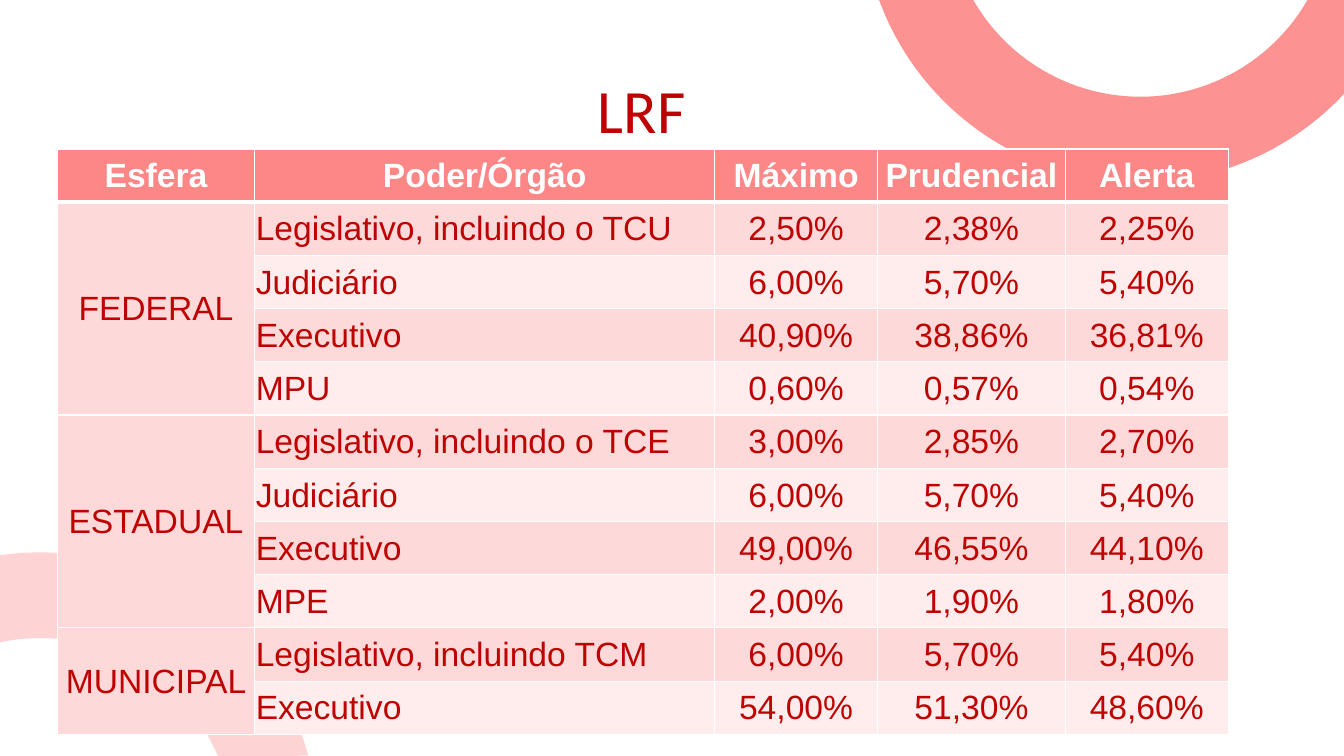
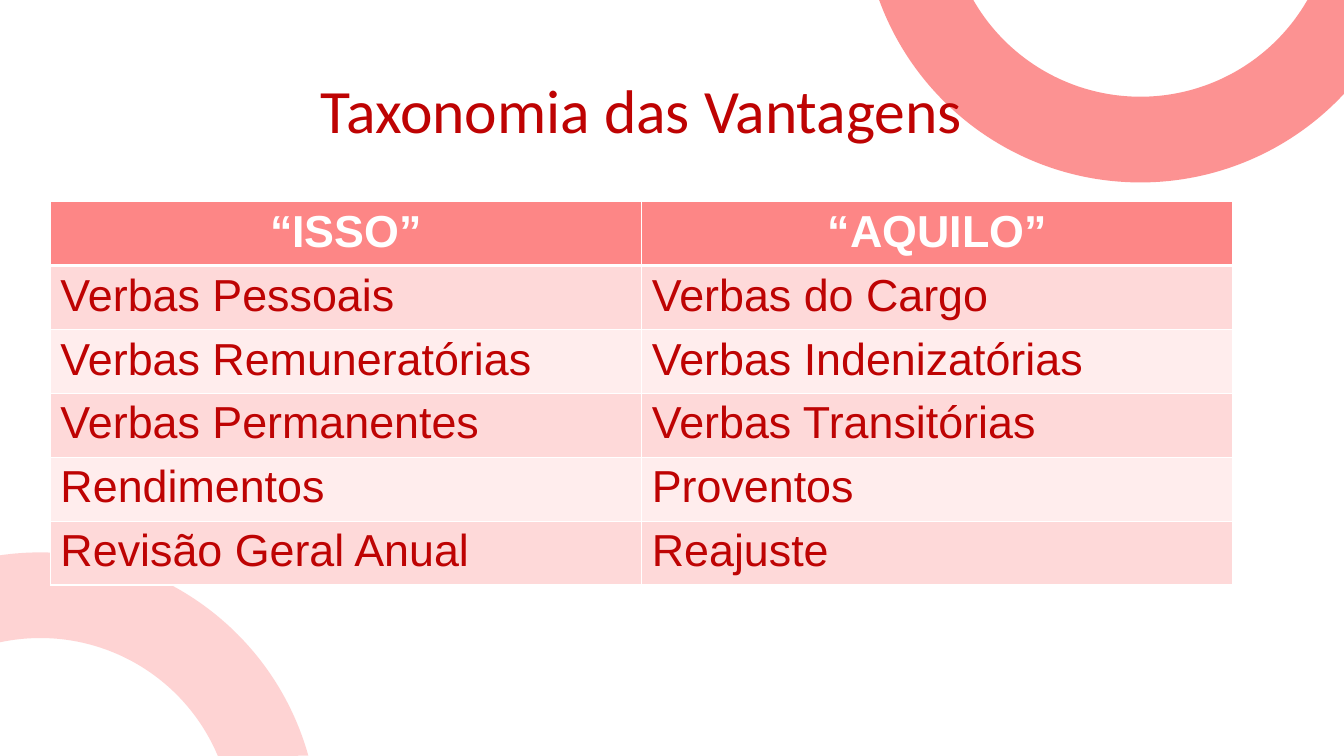
from dataclasses import dataclass
from itertools import pairwise
from math import cos, radians, sin, tan

from pptx import Presentation
from pptx import util as u
from pptx.dml.color import RGBColor
from pptx.enum import text as t
from pptx.oxml import ns, xmlchemy as xml

WIDTH, HEIGHT = u.Inches(13.33), u.Inches(7.5)
WHITE = RGBColor(0xFF, 0xFF, 0xFF)
RED = RGBColor(0xBE, 0x03, 0x03)
RING = RGBColor(0xFB, 0x27, 0x27)
HEAD = RGBColor(0xFD, 0x86, 0x86)
BANDS = (RGBColor(0xFF, 0xED, 0xED), RGBColor(0xFE, 0xD9, 0xD9))
OUTER, INNER = u.Inches(2.76), u.Inches(1.91)


@dataclass(frozen=True)
class Ring:
    """Cut ring: centre and corners in percent of the slide, angles in degrees."""
    x: float
    y: float
    outer: tuple[float, ...]
    inner: tuple[float, ...]
    alpha: int
    corners: tuple[tuple[float, float], ...] = ()


@dataclass(frozen=True)
class Grid:
    """Table: lengths in percent of the slide, insets in inches."""
    left: float
    top: float
    cols: tuple[float, ...]
    row: float
    tall: float
    size: int
    rows: list[tuple[str, ...]]
    flush: set[int]
    inset: tuple[float, float, float]
    spans: tuple[int, ...] = ()


RINGS = (
    Ring(3, 109.87, (-98.3, -90, -15.6), (-22.8, -90, -102.1), 20),
    Ring(84.85, -12.67, (160, 90, 43), (29.8, 90, 150.2), 50, ((100, 0),)),
)

LIMITS = Grid(
    4.26, 19.7, (14.7, 34.2, 12.15, 13.95, 12.15), 7.04, 77.47, 24,
    [
        ("Esfera", "Poder/Órgão", "Máximo", "Prudencial", "Alerta"),
        ("FEDERAL", "Legislativo, incluindo o TCU", "2,50%", "2,38%", "2,25%"),
        ("", "Judiciário", "6,00%", "5,70%", "5,40%"),
        ("", "Executivo", "40,90%", "38,86%", "36,81%"),
        ("", "MPU", "0,60%", "0,57%", "0,54%"),
        ("ESTADUAL", "Legislativo, incluindo o TCE", "3,00%", "2,85%", "2,70%"),
        ("", "Judiciário", "6,00%", "5,70%", "5,40%"),
        ("", "Executivo", "49,00%", "46,55%", "44,10%"),
        ("", "MPE", "2,00%", "1,90%", "1,80%"),
        ("MUNICIPAL", "Legislativo, incluindo TCM", "6,00%", "5,70%", "5,40%"),
        ("", "Executivo", "54,00%", "51,30%", "48,60%"),
    ],
    {1}, (0.01, 0.01, 0), (4, 4, 2),
)

TERMS = Grid(
    3.75, 26.67, (44, 44), 5.47, 50.67, 32,
    [
        ("“ISSO”", "“AQUILO”"),
        ("Verbas Pessoais", "Verbas do Cargo"),
        ("Verbas Remuneratórias", "Verbas Indenizatórias"),
        ("Verbas Permanentes", "Verbas Transitórias"),
        ("Rendimentos", "Proventos"),
        ("Revisão Geral Anual", "Reajuste"),
    ],
    {0, 1}, (0.1, 0.05, 0.05),
)


def wide(share: float) -> int:
    return round(WIDTH * share / 100)


def high(share: float) -> int:
    return round(HEIGHT * share / 100)


def write(par, words: str, font: str, size: int, color: RGBColor, bold: bool = False) -> None:
    run = par.add_run()
    run.text = words
    run.font.name, run.font.size, run.font.bold = font, u.Pt(size), bold
    run.font.color.rgb = color


def arc(ring: Ring, radius: int, turns: tuple[float, ...]) -> list[tuple[int, int]]:
    """Start point, then two handles and an end point for each curve."""
    def spot(turn: float, pull: float) -> tuple[int, int]:
        x = cos(turn) - pull * sin(turn)
        y = sin(turn) + pull * cos(turn)
        return round(wide(ring.x) + radius * x), round(high(ring.y) + radius * y)

    angles = [radians(turn) for turn in turns]
    points = [spot(angles[0], 0)]
    for a, b in pairwise(angles):
        pull = 4 / 3 * tan((b - a) / 4)
        points += [spot(a, pull), spot(b, -pull), spot(b, 0)]
    return points


def bend(lines: list) -> None:
    """Turn each three line segments into one curve."""
    for one, two, three in zip(lines[::3], lines[1::3], lines[2::3]):
        curve = xml.OxmlElement("a:cubicBezTo")
        one.addprevious(curve)
        for line in (one, two, three):
            curve.append(line[0])
            line.getparent().remove(line)


def draw_ring(slide, ring: Ring) -> None:
    first, *outer = arc(ring, OUTER, ring.outer)
    corners = [(wide(x), high(y)) for x, y in ring.corners]
    inner = arc(ring, INNER, ring.inner)
    path = slide.shapes.build_freeform(*first)
    path.add_line_segments(outer + corners + inner, close=True)
    shape = path.convert_to_shape()
    lines = list(shape.element.iter(ns.qn("a:lnTo")))
    bend(lines[:len(outer)])
    bend(lines[len(outer) + len(corners) + 1:])
    shape.shadow.inherit = False
    shape.fill.solid()
    shape.fill.fore_color.rgb = RING
    alpha = xml.OxmlElement("a:alpha")
    alpha.set("val", str(ring.alpha * 1000))
    next(shape.element.iter(ns.qn("a:srgbClr"))).append(alpha)
    shape.line.fill.background()


def draw_title(slide, words: str) -> None:
    box = slide.shapes.add_textbox(wide(3.75), high(5.33), wide(88), high(19.33))
    frame = box.text_frame
    frame.word_wrap = True
    frame.vertical_anchor = t.MSO_ANCHOR.MIDDLE
    par = frame.paragraphs[0]
    par.alignment, par.line_spacing = t.PP_ALIGN.CENTER, 0.9
    write(par, words, "Calibri", 44, RED)


def add_edges(cell, top: int, low: int) -> None:
    """White borders; the top and bottom widths are in points."""
    props = cell._tc.get_or_add_tcPr()
    for spot, (side, size) in enumerate(zip("LRTB", (1, 1, top, low))):
        line = xml.OxmlElement(f"a:ln{side}")
        line.set("w", str(u.Pt(size)))
        fill = xml.OxmlElement("a:solidFill")
        color = xml.OxmlElement("a:srgbClr")
        color.set("val", str(WHITE))
        fill.append(color)
        line.append(fill)
        props.insert(spot, line)


def draw_cell(cell, grid: Grid, row: int, col: int) -> None:
    head = row == 0
    cell.fill.solid()
    cell.fill.fore_color.rgb = HEAD if head else BANDS[row % 2]
    side, top, low = map(u.Inches, grid.inset)
    cell.margin_left = cell.margin_right = side
    cell.margin_top, cell.margin_bottom = top, low
    if grid.spans:
        cell.vertical_anchor = t.MSO_ANCHOR.MIDDLE
    par = cell.text_frame.paragraphs[0]
    flush = col in grid.flush and not head
    par.alignment = t.PP_ALIGN.LEFT if flush else t.PP_ALIGN.CENTER
    write(par, grid.rows[row][col], "Arial", grid.size, WHITE if head else RED, head)
    add_edges(cell, 3 if row == 1 else 1, 3 if head else 1)


def draw_grid(slide, grid: Grid) -> None:
    count = len(grid.rows)
    frame = slide.shapes.add_table(
        count, len(grid.cols), wide(grid.left), high(grid.top),
        wide(sum(grid.cols)), high(grid.tall))
    table = frame.table
    for col, share in zip(table.columns, grid.cols):
        col.width = wide(share)
    for row in table.rows:
        row.height = high(grid.row)
    frame.height = high(grid.tall)
    start = 1
    for span in grid.spans:
        table.cell(start, 0).merge(table.cell(start + span - 1, 0))
        start += span
    for row in range(count):
        for col in range(len(grid.cols)):
            cell = table.cell(row, col)
            if not cell.is_spanned:
                draw_cell(cell, grid, row, col)


def main() -> None:
    deck = Presentation()
    deck.slide_width, deck.slide_height = WIDTH, HEIGHT
    for title, grid in (("LRF", LIMITS), ("Taxonomia das Vantagens", TERMS)):
        slide = deck.slides.add_slide(deck.slide_layouts[6])
        for ring in RINGS:
            draw_ring(slide, ring)
        draw_title(slide, title)
        draw_grid(slide, grid)
    deck.save("out.pptx")


if __name__ == "__main__":
    main()
